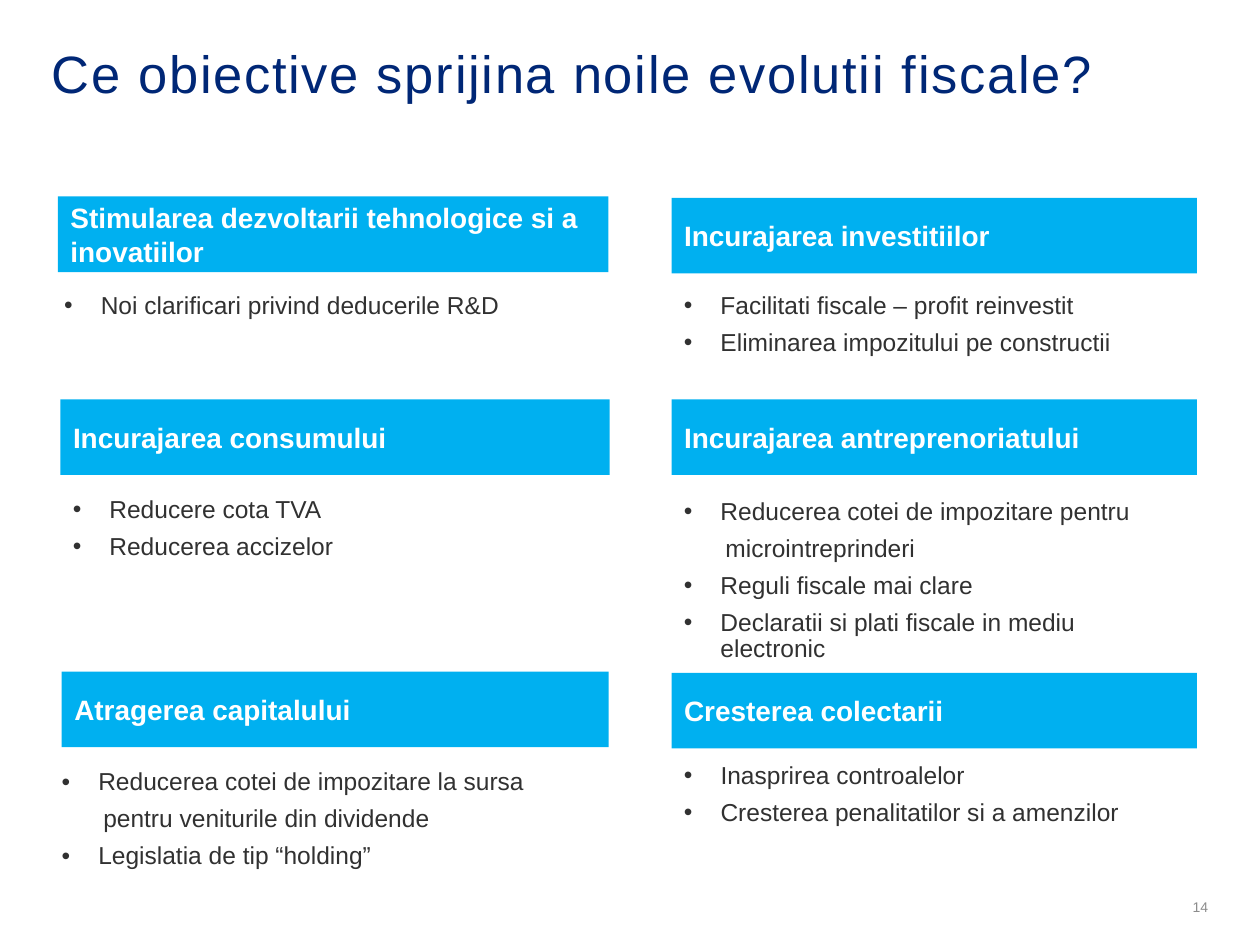
from pptx import Presentation, util as u
from pptx.dml.color import RGBColor
from pptx.enum import shapes, text
from pptx.oxml.ns import qn
from lxml import etree

Inches, Pt = u.Inches, u.Pt
NAVY, SKY, CHARCOAL, GREY, WHITE = "002776", "00B0F0", "313131", "8C8C8C", "FFFFFF"
HEADER_HEIGHT = 0.6

# header box (left, top, width), header, list box (left, top, width, height),
# list insets (side, top), list lines as (wording, has a bullet)
OBJECTIVES = [
    ((0.46, 1.56, 4.37), "Stimularea dezvoltarii tehnologice si a inovatiilor",
     (0.46, 2.28, 4.37, 0.68), (0.05, 0.05),
     [("Noi clarificari privind deducerile R&D", True)]),
    ((5.33, 1.57, 4.17), "Incurajarea investitiilor",
     (5.33, 2.28, 4.17, 0.8), (0.1, 0.05),
     [("Facilitati fiscale – profit reinvestit", True),
      ("Eliminarea impozitului pe constructii", True)]),
    ((0.48, 3.17, 4.36), "Incurajarea consumului",
     (0.48, 3.9, 4.36, 0.93), (0.1, 0.05),
     [("Reducere cota TVA", True),
      ("Reducerea accizelor", True)]),
    ((5.33, 3.17, 4.17), "Incurajarea antreprenoriatului",
     (5.33, 3.91, 4.17, 1.32), (0.1, 0.05),
     [("Reducerea cotei de impozitare pentru", True),
      ("microintreprinderi", False),
      ("Reguli fiscale mai clare", True),
      ("Declaratii si plati fiscale in mediu electronic", True)]),
    ((0.49, 5.33, 4.34), "Atragerea capitalului",
     (0.49, 6.11, 4.34, 0.93), (0, 0),
     [("Reducerea cotei de impozitare la sursa", True),
      ("pentru veniturile din dividende", False),
      ("Legislatia de tip “holding”", True)]),
    ((5.33, 5.34, 4.17), "Cresterea colectarii",
     (5.33, 6.01, 4.25, 0.61), (0.1, 0.05),
     [("Inasprirea controalelor", True),
      ("Cresterea penalitatilor si a amenzilor", True)]),
]


def set_frame(box, side, top, anchor):
    """Set the insets, wrapping and anchor of a box and return its text frame."""
    frame = box.text_frame
    frame.word_wrap = True
    frame.auto_size = text.MSO_AUTO_SIZE.NONE
    frame.vertical_anchor = anchor
    frame.margin_left = frame.margin_right = Inches(side)
    frame.margin_top = frame.margin_bottom = Inches(top)
    return frame


def add_span(para, wording, size, color, bold=False):
    span = para.add_run()
    span.text = wording
    span.font.name = "Arial"
    span.font.size = Pt(size)
    span.font.bold = bold
    span.font.color.rgb = RGBColor.from_string(color)
    return span


deck = Presentation()
deck.slide_width, deck.slide_height = Inches(10), Inches(7.5)
page = deck.slides.add_slide(deck.slide_layouts[1])
title, body = page.placeholders[0], page.placeholders[1]

title.left, title.top, title.width, title.height = map(Inches, (0.41, 0.42, 9.17, 0.5))
para = set_frame(title, 0, 0, text.MSO_ANCHOR.TOP).paragraphs[0]
para.alignment = text.PP_ALIGN.LEFT
para.line_spacing = 0.8
span = add_span(para, "Ce obiective sprijina noile evolutii fiscale?", 30, NAVY)
span.font._element.set("spc", "100")

for index, (header_at, header, list_at, insets, lines) in enumerate(OBJECTIVES):
    bar = page.shapes.add_shape(shapes.MSO_SHAPE.RECTANGLE,
                                *map(Inches, (*header_at, HEADER_HEIGHT)))
    bar.shadow.inherit = False
    bar.fill.solid()
    bar.fill.fore_color.rgb = RGBColor.from_string(SKY)
    bar.line.fill.background()
    para = set_frame(bar, 0, 0, text.MSO_ANCHOR.MIDDLE).paragraphs[0]
    para.alignment = text.PP_ALIGN.LEFT
    para.space_before = Pt(12)
    para._p.get_or_add_pPr().set("marL", str(Inches(0.1)))
    add_span(para, header, 16, WHITE, bold=True)

    if index == 0:
        box = body
        box.left, box.top, box.width, box.height = map(Inches, list_at)
    else:
        box = page.shapes.add_textbox(*map(Inches, list_at))
    frame = set_frame(box, *insets, text.MSO_ANCHOR.TOP)
    for number, (wording, bulleted) in enumerate(lines):
        para = frame.add_paragraph() if number else frame.paragraphs[0]
        para.line_spacing = 0.9
        para.space_before = Pt(6)
        props = para._p.get_or_add_pPr()
        props.set("marL", str(Inches(0.29 if bulleted else 0.33)))
        props.set("indent", str(Inches(-0.29 if bulleted else 0)))
        if bulleted:
            bullet_color = etree.SubElement(props, qn("a:buClr"))
            etree.SubElement(bullet_color, qn("a:srgbClr"), val=CHARCOAL)
            etree.SubElement(props, qn("a:buFont"), typeface="Arial")
            etree.SubElement(props, qn("a:buChar"), char="•")
        else:
            etree.SubElement(props, qn("a:buNone"))
        add_span(para, wording, 14, CHARCOAL)

page_number = page.shapes.add_textbox(*map(Inches, (8.72, 7.06, 0.87, 0.28)))
para = set_frame(page_number, 0, 0, text.MSO_ANCHOR.MIDDLE).paragraphs[0]
para.alignment = text.PP_ALIGN.RIGHT
add_span(para, "14", 8, GREY)

deck.save("out.pptx")
